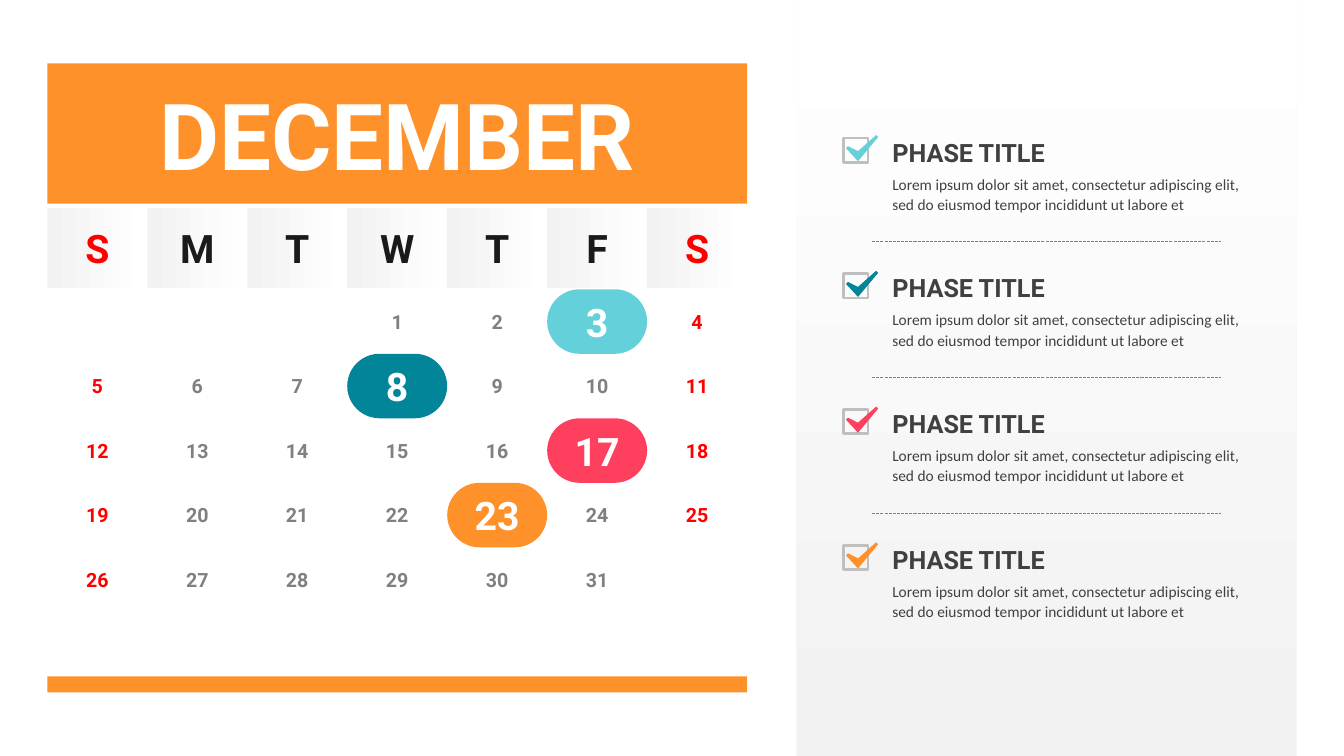
from lxml.etree import SubElement
from pptx import Presentation
from pptx.dml.color import RGBColor
from pptx.enum.dml import MSO_LINE
from pptx.enum.shapes import MSO_CONNECTOR, MSO_SHAPE
from pptx.enum.text import MSO_ANCHOR, MSO_AUTO_SIZE, PP_ALIGN
from pptx.oxml.ns import qn
from pptx.util import Inches, Pt

AQUA, TEAL, PINK, ORANGE = "64D0DA", "028599", "FF3F5E", "FE912A"
RED, BLACK, GRAY, DARK, WHITE = "FF0000", "1A1A1A", "808080", "404040", "FFFFFF"

CALENDAR_LEFT, CALENDAR_WIDTH = 0.47, 6.94
DAY_WIDTH = CALENDAR_WIDTH / 7
DAY_HEIGHT = 0.64
FIRST_WEEK_TOP = 2.87
FIRST_DAY_COLUMN = 3
WEEKDAYS = "SMTWTFS"
MARKED_DAYS = {3: AQUA, 8: TEAL, 17: PINK, 23: ORANGE}

PHASE_COLORS = [AQUA, TEAL, PINK, ORANGE]
PHASE_PITCH = 4.04 / 3
PHASE_TITLE = "PHASE TITLE"
PHASE_TEXT = ("Lorem ipsum dolor sit amet, consectetur adipiscing elit, "
              "sed do eiusmod tempor incididunt ut labore et")
CHECK_POINTS = [(8.69, 1.34), (8.71, 1.36), (8.51, 1.6),
                (8.39, 1.47), (8.41, 1.45), (8.51, 1.5)]


def rgb(color):
    """Turn a hex string into a colour."""
    return RGBColor.from_string(color)


def place(left, top, width, height):
    """Convert a box in inches to lengths."""
    return Inches(left), Inches(top), Inches(width), Inches(height)


def format_font(paragraph, size, color, name="Roboto", bold=True):
    """Format every run of a paragraph."""
    for run in paragraph.runs:
        run.font.name = name
        run.font.size = Pt(size)
        run.font.bold = bold
        run.font.color.rgb = rgb(color)


def clear_margins(text_frame):
    """Make text wrap right up to the edges of its box."""
    text_frame.word_wrap = True
    text_frame.margin_left = text_frame.margin_right = 0
    text_frame.margin_top = text_frame.margin_bottom = 0


def write_centered(shape, text, size, color):
    """Write one line in the middle of a shape."""
    text_frame = shape.text_frame
    text_frame.text = text
    clear_margins(text_frame)
    text_frame.vertical_anchor = MSO_ANCHOR.MIDDLE
    paragraph = text_frame.paragraphs[0]
    paragraph.alignment = PP_ALIGN.CENTER
    format_font(paragraph, size, color)


def fill_solid(shape, color):
    """Give a shape a plain fill without outline or shadow."""
    shape.shadow.inherit = False
    shape.fill.solid()
    shape.fill.fore_color.rgb = rgb(color)
    shape.line.fill.background()


def add_block(slide, box, color, kind=MSO_SHAPE.RECTANGLE):
    """Add a plainly filled shape."""
    shape = slide.shapes.add_shape(kind, *place(*box))
    fill_solid(shape, color)
    return shape


def add_gradient_block(slide, box, angle):
    """Add a rectangle fading from light gray to white."""
    shape = add_block(slide, box, WHITE)
    shape.fill.gradient()
    shape.fill.gradient_angle = angle
    for stop, color in zip(shape.fill.gradient_stops, ["F2F2F2", WHITE]):
        stop.color.rgb = rgb(color)
    return shape


def add_month_title(slide, month):
    """Turn the title placeholder into the month banner."""
    title = slide.shapes.title
    title.left, title.top, title.width, title.height = place(
        CALENDAR_LEFT, 0.63, CALENDAR_WIDTH, 1.39)
    title.fill.solid()
    title.fill.fore_color.rgb = rgb(ORANGE)
    write_centered(title, month, 66, WHITE)
    title.text_frame.auto_size = MSO_AUTO_SIZE.NONE


def add_weekday(slide, column, letter):
    """Add one weekday heading."""
    box = CALENDAR_LEFT + column * DAY_WIDTH, 2.06, DAY_WIDTH, 0.8
    shape = add_gradient_block(slide, box, 0)
    write_centered(shape, letter, 28, RED if column in (0, 6) else BLACK)


def add_day(slide, day):
    """Add one day, in a coloured pill if it is marked."""
    week, column = divmod(day - 1 + FIRST_DAY_COLUMN, 7)
    box = (CALENDAR_LEFT + column * DAY_WIDTH,
           FIRST_WEEK_TOP + week * DAY_HEIGHT, DAY_WIDTH, DAY_HEIGHT)
    if day in MARKED_DAYS:
        pill = add_block(slide, box, MARKED_DAYS[day], MSO_SHAPE.ROUNDED_RECTANGLE)
        pill.adjustments[0] = 0.5
        write_centered(pill, str(day), 28, WHITE)
    else:
        text_box = slide.shapes.add_textbox(*place(*box))
        write_centered(text_box, str(day), 14, RED if column in (0, 6) else GRAY)


def add_checkbox(slide, offset, color):
    """Add a gray box with a coloured check mark."""
    square = slide.shapes.add_shape(
        MSO_SHAPE.RECTANGLE, *place(8.37, 1.37 + offset, 0.24, 0.24))
    square.shadow.inherit = False
    square.fill.background()
    square.line.color.rgb = rgb("BFBFBF")
    square.line.width = Pt(2)
    points = [(Inches(x), Inches(y + offset)) for x, y in CHECK_POINTS]
    builder = slide.shapes.build_freeform(*points[0])
    builder.add_line_segments(points[1:], close=True)
    fill_solid(builder.convert_to_shape(), color)


def add_phase_text(slide, offset):
    """Add the heading and description of a phase."""
    text_box = slide.shapes.add_textbox(*place(8.85, 1.33 + offset, 3.54, 0.8))
    text_frame = text_box.text_frame
    clear_margins(text_frame)
    text_frame.auto_size = MSO_AUTO_SIZE.SHAPE_TO_FIT_TEXT
    heading = text_frame.paragraphs[0]
    heading.text = PHASE_TITLE
    format_font(heading, 18, DARK)
    description = text_frame.add_paragraph()
    description.text = PHASE_TEXT
    description.space_before = Pt(4)
    format_font(description, 11, DARK, "Calibri", False)
    for paragraph in text_frame.paragraphs:
        paragraph.line_spacing = 1.1


def add_divider(slide, top):
    """Add a dashed line between two phases."""
    line = slide.shapes.add_connector(
        MSO_CONNECTOR.STRAIGHT, Inches(8.65), Inches(top), Inches(12.11), Inches(top))
    line.line.color.rgb = rgb(GRAY)
    line.line.width = Pt(0.75)
    line.line.dash_style = MSO_LINE.SQUARE_DOT
    SubElement(line._element.spPr, qn("a:effectLst"))


def main():
    """Build the calendar slide."""
    presentation = Presentation()
    presentation.slide_width = Inches(13.33)
    presentation.slide_height = Inches(7.5)
    slide = presentation.slides.add_slide(presentation.slide_layouts[5])

    add_month_title(slide, "DECEMBER")
    for column, letter in enumerate(WEEKDAYS):
        add_weekday(slide, column, letter)
    for day in range(1, 32):
        add_day(slide, day)
    add_block(slide, (CALENDAR_LEFT, 6.71, CALENDAR_WIDTH, 0.16), ORANGE)

    add_gradient_block(slide, (7.9, 0, 4.96, 7.5), 90)
    for index, color in enumerate(PHASE_COLORS):
        offset = index * PHASE_PITCH
        add_checkbox(slide, offset, color)
        add_phase_text(slide, offset)
        if index < len(PHASE_COLORS) - 1:
            add_divider(slide, 2.4 + offset)

    presentation.save("out.pptx")


if __name__ == "__main__":
    main()
